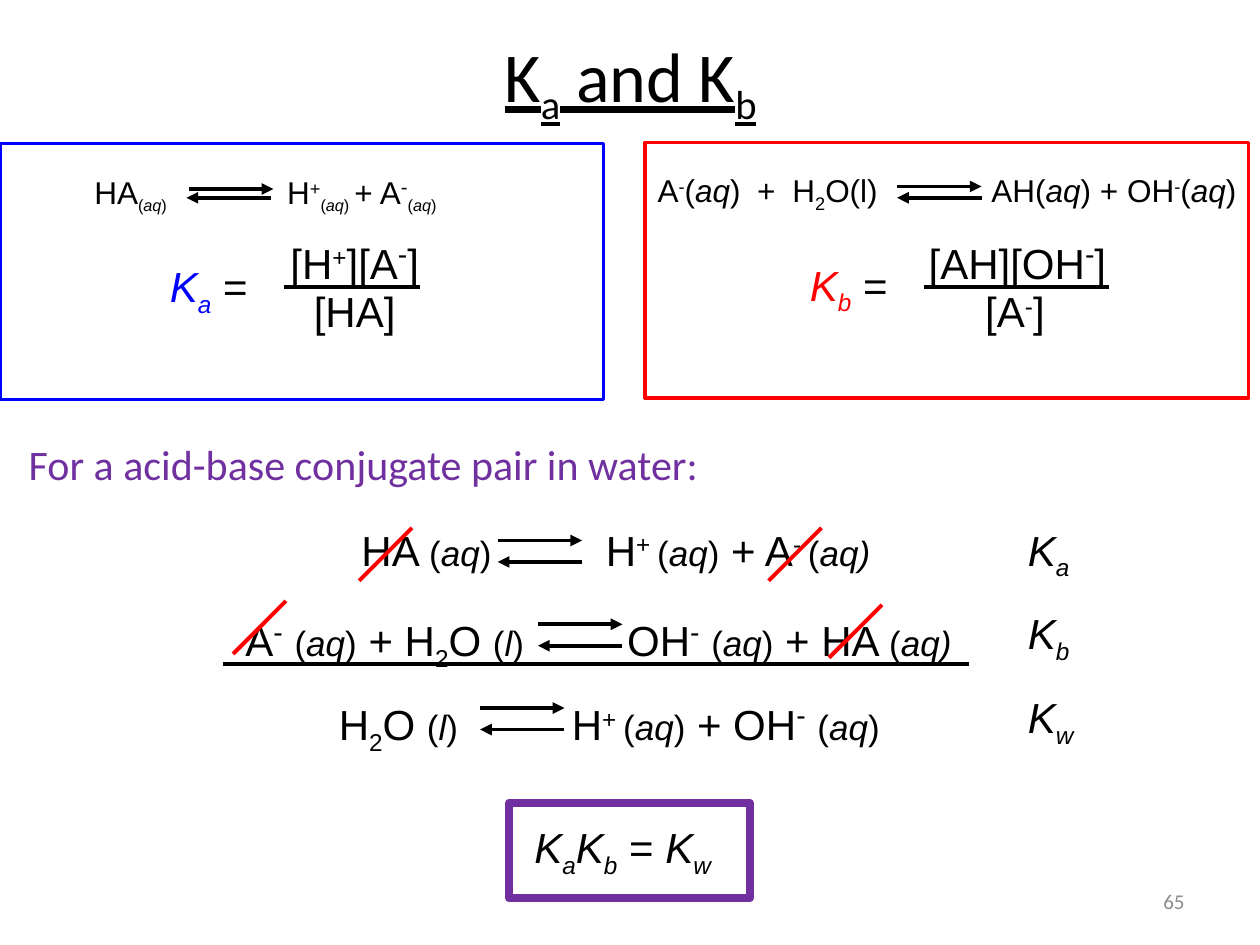
from pptx import Presentation
from pptx.dml.color import RGBColor
from pptx.enum.shapes import MSO_CONNECTOR, MSO_SHAPE
from pptx.enum.text import MSO_ANCHOR, PP_ALIGN
from pptx.oxml.ns import qn
from pptx.util import Inches, Pt
from lxml.etree import SubElement

COLORS = {
    "black": "000000",
    "acid": "0000FF",
    "base": "FF0000",
    "water": "7030A0",
    "number": "8C8C8C",
}
BASELINES = {"^": "30000", "_": "-25000"}
LEFT, CENTER, RIGHT = PP_ALIGN.LEFT, PP_ALIGN.CENTER, PP_ALIGN.RIGHT


def rgb(name):
    return RGBColor.from_string(COLORS[name])


def add_spans(para, spans, size, font="Arial", color="black", underline=None):
    """Each span is (text, marks, size, color); marks are i italic, ^ raised, _ lowered."""
    for text, *style in spans:
        marks, own_size, own_color = (style + [None] * 3)[:3]
        marks = marks or ""
        span = para.add_run()
        span.text = text
        span.font.name = font
        span.font.size = Pt(own_size or size)
        span.font.color.rgb = rgb(own_color or color)
        span.font.italic = "i" in marks
        span.font.underline = underline
        for mark, offset in BASELINES.items():
            if mark in marks:
                span._r.get_or_add_rPr().set("baseline", offset)


def add_tabs(para, stops):
    tab_list = SubElement(para._p.get_or_add_pPr(), qn("a:tabLst"))
    for stop in stops:
        SubElement(tab_list, qn("a:tab"), pos=str(Inches(stop)), algn="l")


def add_text(page, place, spans, size=24, align=LEFT, tabs=(), **style):
    box = page.shapes.add_textbox(*map(Inches, place))
    frame = box.text_frame
    frame.word_wrap = align != CENTER
    if align == LEFT:
        frame.margin_right = 0
    para = frame.paragraphs[0]
    para.alignment = align
    if tabs:
        add_tabs(para, tabs)
    add_spans(para, spans, size, **style)
    return box


def add_line(page, start, end, color="black", arrow=False):
    line = page.shapes.add_connector(
        MSO_CONNECTOR.STRAIGHT, *map(Inches, (*start, *end)))
    line.line.color.rgb = rgb(color)
    line.line.width = Pt(2.25)
    if arrow:
        SubElement(line.line._get_or_add_ln(), qn("a:tailEnd"), type="triangle")
    SubElement(line._element.spPr, qn("a:effectLst"))


def add_equilibrium(page, left, top, gap, shift=0):
    """Forward arrow above a reverse arrow, which starts shift further left."""
    length = 0.67
    add_line(page, (left, top), (left + length, top), arrow=True)
    add_line(page, (left - shift + length, top + gap), (left - shift, top + gap), arrow=True)


def add_frame(page, place, color, width):
    frame = page.shapes.add_shape(MSO_SHAPE.RECTANGLE, *map(Inches, place))
    frame.shadow.inherit = False
    frame.fill.background()
    frame.line.color.rgb = rgb(color)
    frame.line.width = Pt(width)
    return frame


def add_fraction(page, label, label_place, top, top_place, bottom, bottom_place, bar):
    add_text(page, label_place, label + [(" =",)])
    add_text(page, top_place, top, align=CENTER)
    add_text(page, bottom_place, bottom, align=CENTER)
    add_line(page, (bar[0], 2.28), (bar[1], 2.28))


def state(name, size=20, marks="", closing=""):
    """Spans of a state of matter such as (aq)."""
    return [("(", marks, size), (name, marks + "i", size), (")", marks + closing, size)]


def constant(letter, color="black"):
    return [("K", "i", None, color), (letter, "i_", None, color)]


def add_title(page):
    title = page.shapes.title
    title.left, title.top, title.width, title.height = map(Inches, (0.88, 0.01, 8.25, 1.25))
    title.text_frame.vertical_anchor = MSO_ANCHOR.MIDDLE
    para = title.text_frame.paragraphs[0]
    para.alignment = CENTER
    add_spans(para, [("K",), ("a", "_"), (" and K",), ("b", "_")], 40,
              font="Calibri", underline=True)


def add_acid_panel(page):
    lowered = state("aq", 16, "_")
    add_text(page, (0.65, 1.3, 3.09, 0.4),
             [("HA",), *lowered, ("\tH",), ("+", "^"), *lowered, (" ", "_"),
              ("+ A",), ("-", "^", 20), *lowered], size=18, tabs=[1.53])
    add_equilibrium(page, 1.5, 1.5, 0.07, shift=0.02)
    add_fraction(page, constant("a", "acid"), (1.25, 2.02, 0.83, 0.5),
                 [("[H",), ("+", "^"), ("][A",), ("-", "^", 28), ("]",)],
                 (2.19, 1.78, 1.25, 0.5),
                 [("[HA]",)], (2.39, 2.22, 0.85, 0.5), (2.25, 3.33))
    add_frame(page, (0, 1.14, 4.79, 2.03), "acid", 2)


def add_base_panel(page):
    aqueous = state("aq", 18)
    add_text(page, (5.12, 1.31, 4.88, 0.4),
             [("A",), ("-", "^"), *aqueous, ("\t+\tH",), ("2", "_"), ("O(l)\tAH",),
              *aqueous, (" + OH",), ("-", "^"), *aqueous],
             size=18, tabs=[0.79, 1.07, 2.65])
    add_equilibrium(page, 7.12, 1.48, 0.09)
    add_fraction(page, constant("b", "base"), (6.33, 2.01, 0.83, 0.5),
                 [("[AH][OH",), ("-", "^", 28), ("]",)], (7.26, 1.78, 1.63, 0.51),
                 [("[A",), ("-", "^"), ("]",)], (7.71, 2.22, 0.69, 0.51), (7.33, 8.8))
    add_frame(page, (5.12, 1.13, 4.79, 2.03), "base", 2)


def add_reaction_sum(page):
    aqueous, liquid = state("aq"), state("l")
    slanted = state("aq", closing="i")
    water = [("H",), ("2", "_"), ("O ",), *liquid]
    hydrogen = [("\tH",), ("+ ", "^"), *aqueous]
    minus = [("-", "^", 28), (" ",)]
    # left, width, tab stop, arrows left, constant, spans
    rows = [
        (2.77, 4.39, 1.94, 3.95, "a",
         [("HA ",), *aqueous, *hydrogen, (" + A",), ("- ", "^"), *slanted]),
        (1.85, 5.87, 3.03, 4.27, "b",
         [("A",), *minus, *aqueous, (" + ",), *water, ("\tOH",), *minus, *aqueous,
          (" + HA ",), *slanted]),
        (2.59, 4.59, 1.85, 3.81, "w",
         [*water, *hydrogen, (" + OH",), *minus, *aqueous]),
    ]
    for index, (left, width, tab, arrows, letter, spans) in enumerate(rows):
        top = 4.11 + index * 0.665
        add_text(page, (left, top, width, 0.5), spans, tabs=[tab])
        add_equilibrium(page, arrows, top + 0.18, 0.17)
        add_text(page, (8.06, top, 0.58, 0.5), constant(letter))
    add_line(page, (1.77, 5.27), (7.69, 5.27))
    for left, bottom in [(6.1, 4.61), (1.85, 5.19), (2.85, 4.61), (6.58, 5.22)]:
        add_line(page, (left, bottom), (left + 0.42, bottom - 0.42), "base")


def add_result(page):
    frame = add_frame(page, (4.04, 6.37, 1.91, 0.76), "water", 4.5)
    text = frame.text_frame
    text.word_wrap = False
    text.vertical_anchor = MSO_ANCHOR.TOP
    text.margin_left = text.margin_right = Inches(0.2)
    text.margin_top = text.margin_bottom = Inches(0.15)
    para = text.paragraphs[0]
    para.alignment = LEFT
    add_spans(para, [*constant("a"), *constant("b"), (" = ",), *constant("w")], 24)


def main():
    deck = Presentation()
    deck.slide_width, deck.slide_height = Inches(10), Inches(7.5)
    page = deck.slides.add_slide(deck.slide_layouts[5])
    add_title(page)
    add_base_panel(page)
    add_acid_panel(page)
    add_reaction_sum(page)
    add_result(page)
    add_text(page, (0.13, 3.43, 6.84, 0.5),
             [("For a acid-base conjugate pair in water:",)], font="Calibri", color="water")
    number = add_text(page, (7.17, 6.95, 2.33, 0.4), [("65",)], size=12,
                      align=RIGHT, font="Calibri", color="number")
    number.text_frame.vertical_anchor = MSO_ANCHOR.MIDDLE
    deck.save("out.pptx")


if __name__ == "__main__":
    main()
